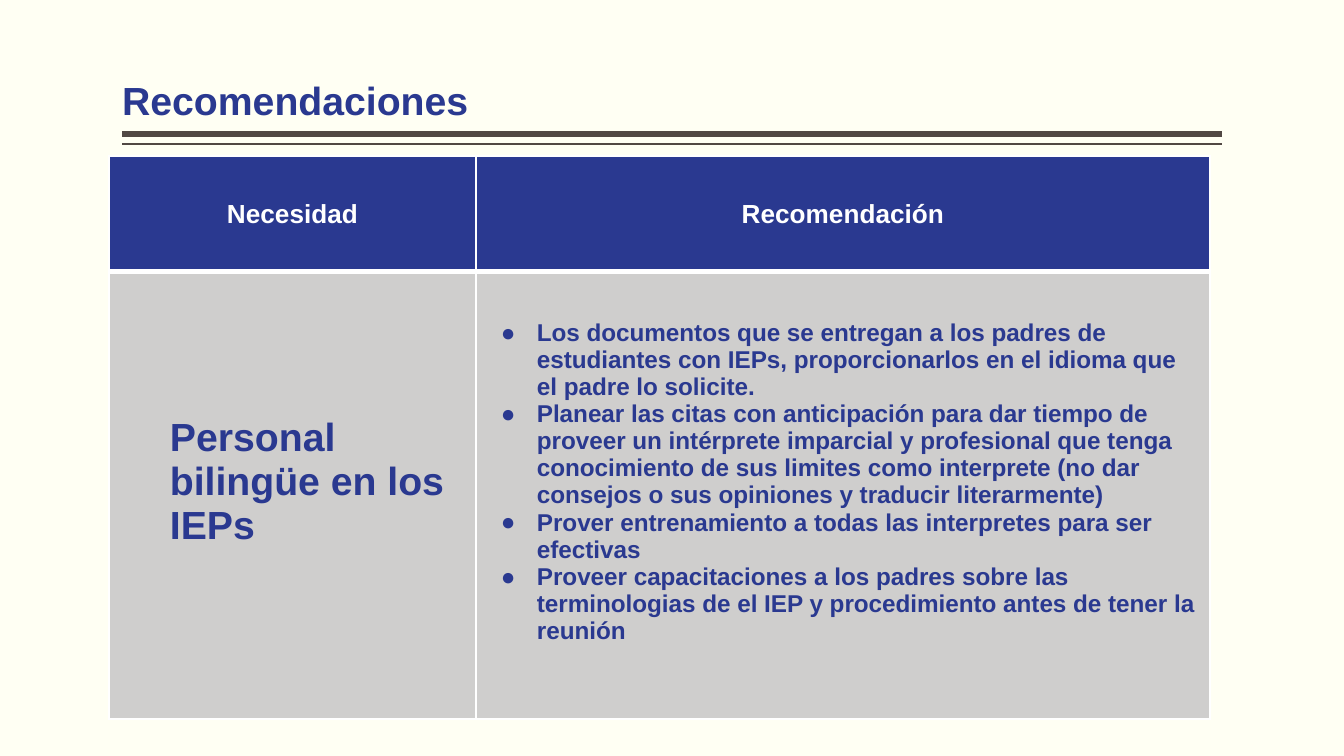
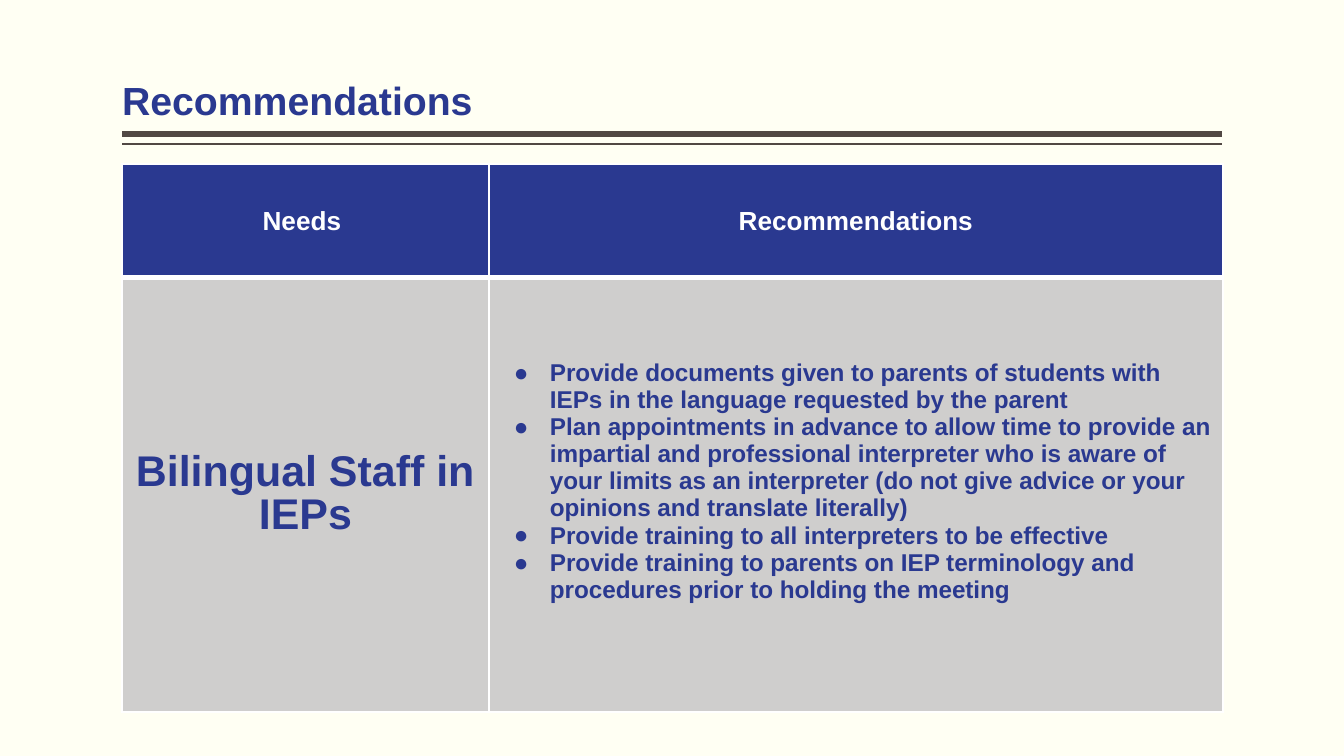
import pptx
import pptx.dml.color
import pptx.enum.shapes
import pptx.enum.text
import pptx.oxml
import pptx.oxml.ns
import pptx.util
from lxml import etree

EMU_PER_PX = 914400 / 134.4
FONT = "Arial"
COLORS = {
    "page": "FFFFF3",
    "blue": "2A3990",
    "rule": "514843",
    "gray": "CFCECD",
    "white": "FFFFFF",
}
ALIGN = pptx.enum.text.PP_ALIGN
ANCHOR = pptx.enum.text.MSO_ANCHOR

TITLE_BOX = (122, 8, 1100, 121)
RULES = ((134, 3), (144, 1))  # y in px, width in points
COLUMNS = (367, 734)
INSETS = (10, 5, 10, 5)
INDENT, HANGING = 51, -36

SLIDES = [
    {
        "title": "Recomendaciones",
        "at": (109, 156),
        "rows": (116, 447),
        "headers": ("Necesidad", "Recomendación"),
        "need": "Personal bilingüe en los IEPs",
        "need_format": {"size": 21, "indent": INDENT},
        "need_bottom": 32,
        "advice": [
            "Los documentos que se entregan a los padres de estudiantes con IEPs, "
            "proporcionarlos en el idioma que el padre lo solicite.",
            "Planear las citas con anticipación para dar tiempo de proveer un intérprete "
            "imparcial y profesional que tenga conocimiento de sus limites como interprete "
            "(no dar consejos o sus opiniones y traducir literarmente)",
            "Prover entrenamiento a todas las interpretes para ser efectivas",
            "Proveer capacitaciones a los padres sobre las terminologias de el IEP y "
            "procedimiento antes de tener la reunión",
        ],
    },
    {
        "title": "Recommendations",
        "at": (122, 164),
        "rows": (114, 434),
        "headers": ("Needs ", "Recommendations"),
        "need": "Bilingual Staff in IEPs",
        "need_format": {"size": 23, "align": ALIGN.CENTER, "spacing": 0.9},
        "need_bottom": 5,
        "advice": [
            "Provide documents given to parents of students with IEPs in the language "
            "requested by the parent",
            "Plan appointments in advance to allow time to provide an impartial and "
            "professional interpreter who is aware of your limits as an interpreter "
            "(do not give advice or your opinions and translate literally)",
            "Provide training to all interpreters to be effective",
            "Provide training to parents on IEP terminology and procedures prior to "
            "holding the meeting",
        ],
    },
]


def px(length):
    return pptx.util.Emu(round(length * EMU_PER_PX))


def rgb(name):
    return pptx.dml.color.RGBColor.from_string(COLORS[name])


def sub(parent, tag, **attributes):
    return etree.SubElement(parent, pptx.oxml.ns.qn(tag), attributes)


def write(frame, *texts, size, color="blue", align=ALIGN.LEFT, spacing=None,
          indent=0, hanging=0, bullet=None):
    """Fill a text frame with one bold paragraph per text."""
    for index, text in enumerate(texts):
        para = frame.paragraphs[0] if index == 0 else frame.add_paragraph()
        para.alignment = align
        if spacing:
            para.line_spacing = spacing
        properties = para._p.get_or_add_pPr()
        properties.set("marL", str(px(indent)))
        properties.set("indent", str(px(hanging)))
        if bullet:
            sub(sub(properties, "a:buClr"), "a:srgbClr", val=COLORS[color])
            sub(properties, "a:buFont", typeface=FONT)
            sub(properties, "a:buChar", char=bullet)
        span = para.add_run()
        span.text = text
        span.font.name = FONT
        span.font.size = pptx.util.Pt(size)
        span.font.bold = True
        span.font.color.rgb = rgb(color)


def set_insets(target, left, top, right, bottom):
    target.margin_left, target.margin_top = px(left), px(top)
    target.margin_right, target.margin_bottom = px(right), px(bottom)


def style_cell(cell, fill, top=1, bottom=1, bottom_inset=INSETS[3]):
    cell.vertical_anchor = ANCHOR.MIDDLE
    set_insets(cell, *INSETS[:3], bottom_inset)
    cell.fill.solid()
    cell.fill.fore_color.rgb = rgb(fill)
    # Borders must precede the fill
    properties = cell._tc.get_or_add_tcPr()
    widths = {"a:lnL": 1, "a:lnR": 1, "a:lnT": top, "a:lnB": bottom}
    for position, (tag, width) in enumerate(widths.items()):
        line = sub(properties, tag, w=str(pptx.util.Pt(width)))
        sub(sub(line, "a:solidFill"), "a:srgbClr", val=COLORS["white"])
        properties.insert(position, line)


def add_heading(page, title, box):
    left, top, width, height = box
    # Double rule under the title
    for y, weight in RULES:
        rule = page.shapes.add_connector(
            pptx.enum.shapes.MSO_CONNECTOR.STRAIGHT,
            px(left + width), px(y), px(left), px(y))
        rule.line.color.rgb = rgb("rule")
        rule.line.width = pptx.util.Pt(weight)
        sub(rule._element.spPr, "a:effectLst")
    # Title
    frame = page.shapes.add_textbox(px(left), px(top), px(width), px(height)).text_frame
    frame.word_wrap = True
    frame.vertical_anchor = ANCHOR.BOTTOM
    set_insets(frame, 0, 5, 0, 5)
    write(frame, title, size=21, spacing=0.9)


def add_needs_table(page, content):
    left, top = content["at"]
    rows = content["rows"]
    table = page.shapes.add_table(
        len(rows), len(COLUMNS), px(left), px(top), px(sum(COLUMNS)), px(sum(rows))).table
    table.horz_banding = False
    for column, width in zip(table.columns, COLUMNS):
        column.width = px(width)
    for row, height in zip(table.rows, rows):
        row.height = px(height)
    # Header row
    for index, header in enumerate(content["headers"]):
        cell = table.cell(0, index)
        style_cell(cell, "blue", bottom=3)
        write(cell.text_frame, header, size=14, color="white", align=ALIGN.CENTER)
    # Need and its recommendations
    need, advice = table.cell(1, 0), table.cell(1, 1)
    style_cell(need, "gray", top=3, bottom_inset=content["need_bottom"])
    write(need.text_frame, content["need"], **content["need_format"])
    style_cell(advice, "gray", top=3, bottom_inset=32)
    write(advice.text_frame, *content["advice"], size=13,
          indent=INDENT, hanging=HANGING, bullet="●")


def add_recommendation_page(deck, content):
    page = deck.slides.add_slide(deck.slide_layouts[6])
    page.background.fill.solid()
    page.background.fill.fore_color.rgb = rgb("page")
    add_heading(page, content["title"], TITLE_BOX)
    add_needs_table(page, content)


def main():
    deck = pptx.Presentation()
    deck.slide_width, deck.slide_height = px(1344), px(756)
    for content in SLIDES:
        add_recommendation_page(deck, content)
    deck.save("out.pptx")


if __name__ == "__main__":
    main()
